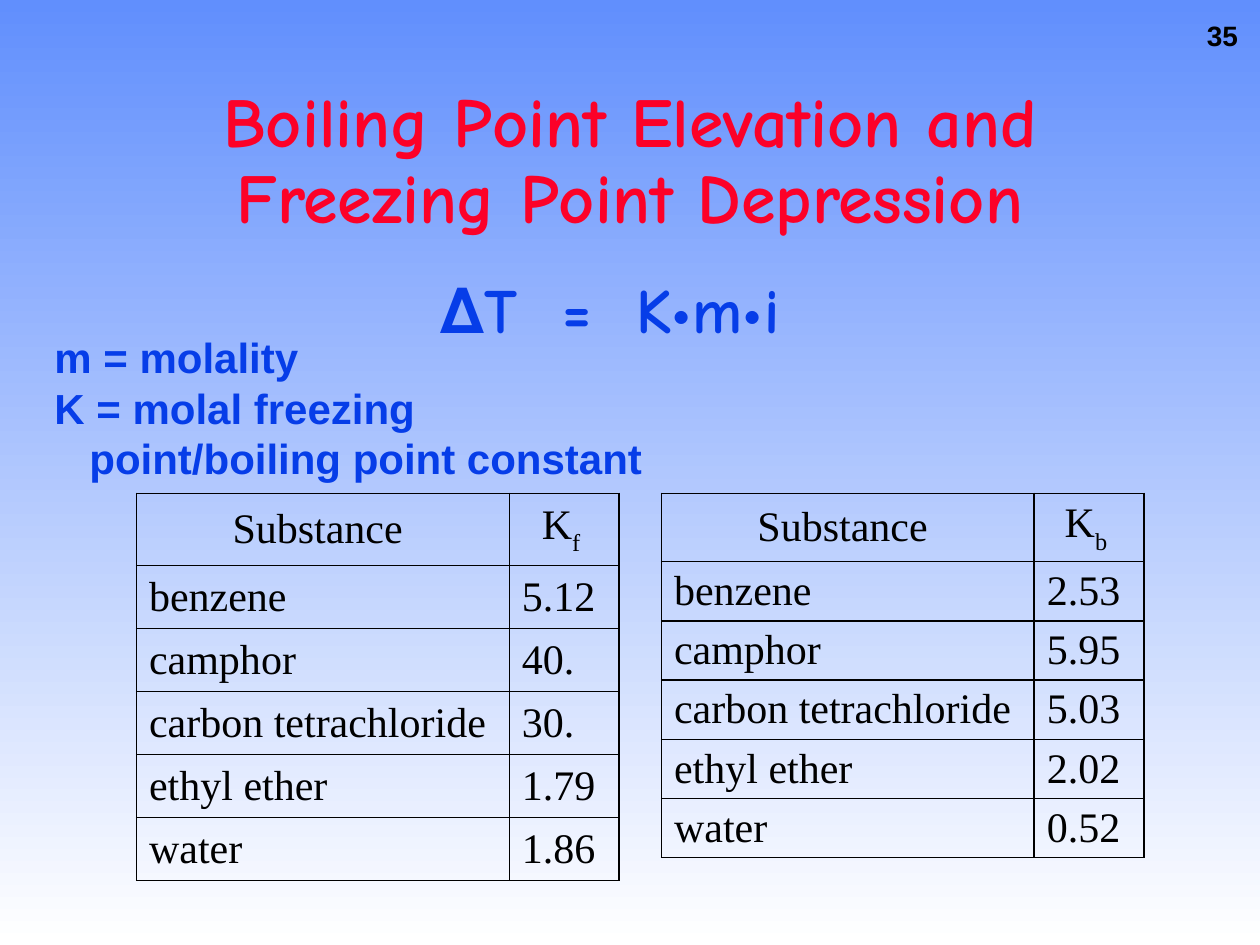
from lxml import etree
from pptx import Presentation
from pptx import util as u
from pptx.dml.color import RGBColor
from pptx.enum import text
from pptx.oxml import ns

ALIGN = text.PP_ALIGN
MIDDLE = text.MSO_ANCHOR.MIDDLE
SUBSTANCES = ["benzene", "camphor", "carbon tetrachloride", "ethyl ether", "water"]
FREEZING = ["5.12", "40.", "30.", "1.79", "1.86"]
BOILING = ["2.53", "5.95", "5.03", "2.02", "0.52"]


def color(hex_text):
    return RGBColor.from_string(hex_text)


def border(cell, width=1, line_color="000000"):
    """Draw all four sides of a table cell."""
    tc_pr = cell._tc.get_or_add_tcPr()
    for i, side in enumerate(("lnL", "lnR", "lnT", "lnB")):
        ln = etree.Element(ns.qn(f"a:{side}"), w=str(u.Pt(width)))
        fill = etree.SubElement(ln, ns.qn("a:solidFill"))
        etree.SubElement(fill, ns.qn("a:srgbClr"), val=line_color)
        tc_pr.insert(i, ln)


class Deck:
    """Holds the text styles and the current slide."""

    styles = {
        "number": dict(name="Arial", size=u.Pt(16), bold=True, color="000000"),
        "title": dict(name="Comic Neue", size=u.Pt(40), bold=True, color="FC0128"),
        "formula": dict(name="Comic Neue", size=u.Pt(36), bold=True, color="063DE8"),
        "legend": dict(name="Arial", size=u.Pt(24), bold=True, color="063DE8"),
        "cell": dict(name="Times New Roman", size=u.Pt(24), bold=False, color="000000"),
    }

    def __init__(self, width, height):
        self.prs = Presentation()
        self.prs.slide_width, self.prs.slide_height = u.Pt(width), u.Pt(height)
        self.s = self.prs.slides.add_slide(self.prs.slide_layouts[5])

    def background(self, top, bottom):
        fill = self.s.background.fill
        fill.gradient()
        fill.gradient_angle = 270
        for stop, position, value in zip(fill.gradient_stops, (0, 1), (top, bottom)):
            stop.position = position
            stop.color.rgb = color(value)

    def run(self, p, content, style, baseline=0):
        r = p.add_run()
        r.text = content
        for key, value in self.styles[style].items():
            if key == "color":
                r.font.color.rgb = color(value)
            else:
                setattr(r.font, key, value)
        if baseline:
            r._r.get_or_add_rPr().set("baseline", str(baseline * 1000))

    def title(self, content, left, top, width, height):
        sp = self.s.shapes.title
        sp.left, sp.top, sp.width, sp.height = map(u.Pt, (left, top, width, height))
        tf = sp.text_frame
        tf.word_wrap, tf.vertical_anchor = True, MIDDLE
        tf.auto_size = text.MSO_AUTO_SIZE.NONE
        p = tf.paragraphs[0]
        p.alignment, p.line_spacing = ALIGN.CENTER, 0.9
        self.run(p, content, "title")

    def text(self, lines, style, left, top, width, height, spacing=1.0, wrap=True):
        """Add a text box; each line is a (text, left indent) pair."""
        tf = self.s.shapes.add_textbox(*map(u.Pt, (left, top, width, height))).text_frame
        tf.word_wrap = wrap
        for i, (content, indent) in enumerate(lines):
            p = tf.add_paragraph() if i else tf.paragraphs[0]
            p.line_spacing = spacing
            if indent:
                p._p.get_or_add_pPr().set("marL", str(u.Pt(indent)))
            self.run(p, content, style)

    def constants(self, subscript, values, left, top, header, row):
        """Add a table of substances and their constants."""
        widths = (213, 62.6)
        count = len(values) + 1
        frame = self.s.shapes.add_table(count, 2, *map(
            u.Pt, (left, top, sum(widths), header + row * len(values))))
        table = frame.table
        table.first_row = table.horz_banding = False
        for column, width in zip(table.columns, widths):
            column.width = u.Pt(width)
        rows = [("Substance ", "K"), *zip(SUBSTANCES, values)]
        for i, contents in enumerate(rows):
            table.rows[i].height = u.Pt(row if i else header)
            for j, content in enumerate(contents):
                cell = table.cell(i, j)
                cell.fill.background()
                cell.vertical_anchor = MIDDLE
                cell.margin_top = cell.margin_bottom = u.Pt(2.5)
                border(cell)
                p = cell.text_frame.paragraphs[0]
                p.alignment = ALIGN.LEFT if i else ALIGN.CENTER
                self.run(p, content, "cell")
        self.run(table.cell(0, 1).text_frame.paragraphs[0], subscript + " ", "cell", -30)


def main():
    deck = Deck(720, 540)
    deck.background("618FFD", "FFFFFF")
    deck.text([("35", 0)], "number", 682.5, 7.2, 34, 26, wrap=False)
    deck.title("Boiling Point Elevation and Freezing Point Depression", 78, 48, 564, 90)
    deck.text([("∆T  =  K•m•i", 166.5)], "formula", 78, 156, 677 - 78, 36, spacing=0.9)
    deck.constants("b", BOILING, 378, 282, header=38.9, row=33.7)
    deck.text([("m = molality", 0), ("K = molal freezing", 0),
               ("point/boiling point constant", 20)],
              "legend", 24, 186, 359, 93.6, spacing=u.Pt(28.8))
    deck.constants("f", FREEZING, 78, 282, header=41.2, row=36)
    deck.prs.save("out.pptx")


if __name__ == "__main__":
    main()
